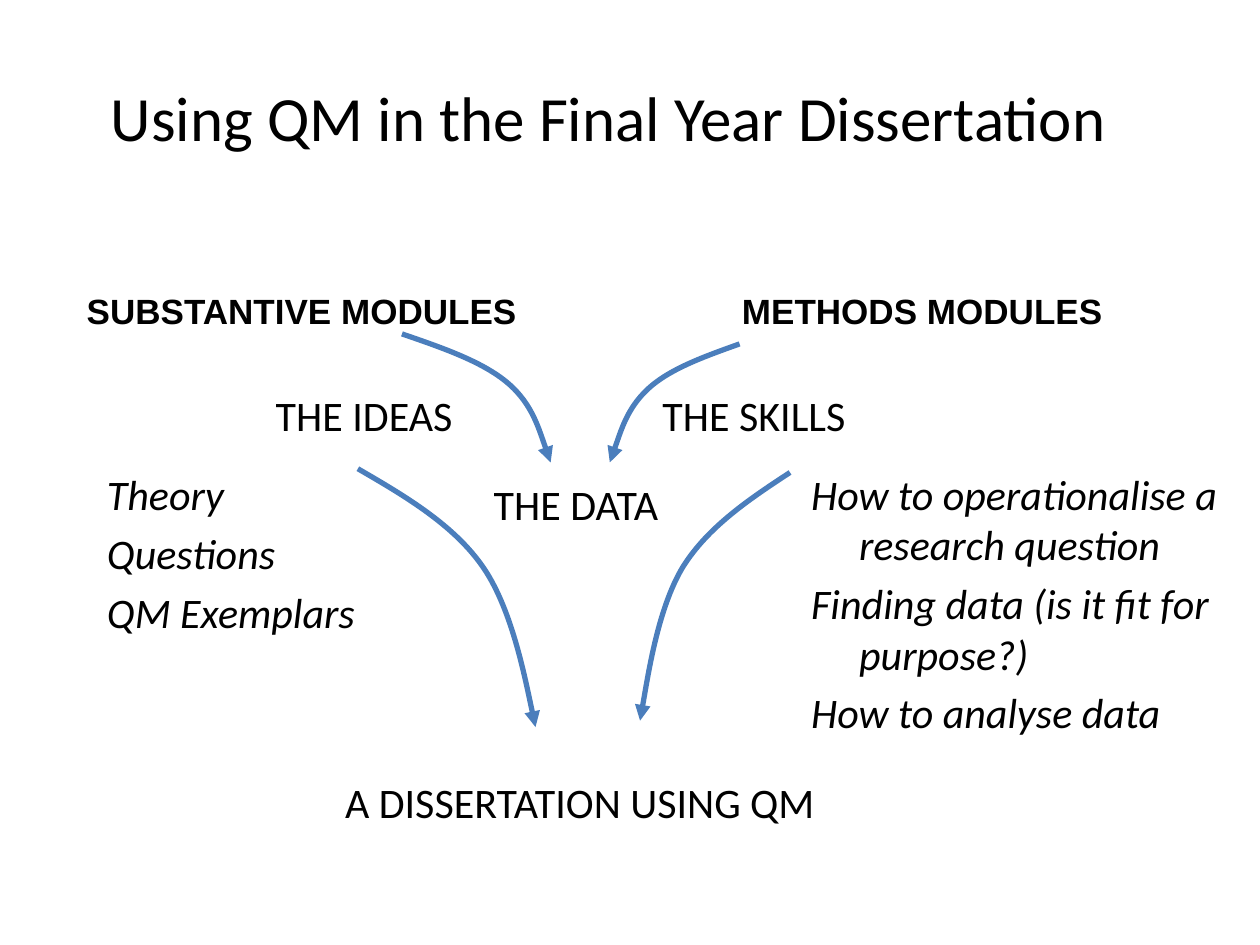
from lxml import etree
from pptx import Presentation
from pptx.dml.color import RGBColor
from pptx.enum.text import MSO_ANCHOR, PP_ALIGN
from pptx.oxml.ns import qn
from pptx.util import Inches, Pt

CENTER = PP_ALIGN.CENTER
MIDDLE = MSO_ANCHOR.MIDDLE
BLACK = "000000"
BLUE = "4B7EBC"
HANGING = Inches(0.38)

HEADINGS = [
    ("SUBSTANTIVE MODULES", (0.59, 2.25, 3.7, 0.44)),
    ("METHODS MODULES", (5.79, 2.25, 3.15, 0.77)),
]
LABELS = [
    ("THE IDEAS", (2.09, 3.04, 1.97, 0.63)),
    ("THE SKILLS", (5.16, 3.04, 1.97, 0.63)),
    ("THE DATA", (3.82, 3.75, 1.97, 0.63)),
]
IDEAS = ["Theory", "Questions", "QM Exemplars"]
SKILLS = [
    "How to operationalise a research question",
    "Finding data (is it fit for purpose?)",
    "How to analyse data",
]
CURVES = [
    [(2.84, 3.72), (3.22, 3.94), (3.61, 4.17), (3.84, 4.51),
     (4.07, 4.85), (4.25, 5.77), (4.25, 5.77)],
    [(6.27, 3.75), (5.95, 3.96), (5.62, 4.18), (5.42, 4.5),
     (5.22, 4.83), (5.08, 5.72), (5.08, 5.72)],
    [(3.19, 2.65), (3.51, 2.76), (3.83, 2.87), (4.03, 3.04),
     (4.23, 3.21), (4.37, 3.67), (4.37, 3.67)],
    [(5.87, 2.73), (5.59, 2.83), (5.31, 2.93), (5.14, 3.09),
     (4.97, 3.25), (4.84, 3.67), (4.84, 3.67)],
]


def color(value):
    return RGBColor.from_string(value)


def add_text(page, lines, place, size=24, font="Calibri", bold=False, italic=False):
    box = page.shapes.add_textbox(*map(Inches, place))
    frame = box.text_frame
    frame.word_wrap = True
    frame.text = "\n".join(lines)
    for para in frame.paragraphs:
        for span in para.runs:
            span.font.size = Pt(size)
            span.font.name = font
            span.font.bold = bold
            span.font.italic = italic
            span.font.color.rgb = color(BLACK)
    return frame


def add_hanging_text(page, lines, place, italic=False):
    frame = add_text(page, lines, place, italic=italic)
    for para in frame.paragraphs:
        para.space_before = Pt(4.8)
        properties = para._p.get_or_add_pPr()
        properties.set("marL", str(HANGING))
        properties.set("indent", str(-HANGING))
    return frame


def add_title(page, text):
    frame = add_text(page, [text], (0.5, 0.3, 9, 1.25), size=36)
    frame.vertical_anchor = MIDDLE
    frame.margin_right = Inches(0.44)
    frame.paragraphs[0].alignment = CENTER


def bend_path(shape):
    path = next(shape._element.iter(qn("a:path")))
    segments = path.findall(qn("a:lnTo"))
    for start in range(0, len(segments), 3):
        bezier = etree.SubElement(path, qn("a:cubicBezTo"))
        for segment in segments[start:start + 3]:
            bezier.append(segment[0])
            path.remove(segment)


def add_curved_arrow(page, points):
    start, *rest = [(Inches(x), Inches(y)) for x, y in points]
    builder = page.shapes.build_freeform(*start)
    builder.add_line_segments(rest, close=False)
    arrow = builder.convert_to_shape()
    bend_path(arrow)
    arrow.shadow.inherit = False
    arrow.fill.background()
    arrow.line.color.rgb = color(BLUE)
    arrow.line.width = Pt(3)
    line = arrow.line._get_or_add_ln()
    etree.SubElement(line, qn("a:tailEnd"), type="triangle")


def main():
    deck = Presentation()
    deck.slide_width = Inches(10)
    deck.slide_height = Inches(7.5)
    page = deck.slides.add_slide(deck.slide_layouts[6])

    add_title(page, "Using QM in the Final Year Dissertation")
    add_hanging_text(page, IDEAS, (0.75, 3.67, 2.52, 2.08), italic=True)
    add_hanging_text(page, SKILLS, (6.34, 3.67, 3.86, 2.2), italic=True)
    outcome = add_hanging_text(page, ["A DISSERTATION USING QM"], (2.64, 5.64, 4.58, 1.53))
    outcome.margin_top = Inches(0.52)
    for text, place in HEADINGS:
        add_text(page, [text], place, size=20, font="Arial", bold=True)
    for text, place in LABELS:
        add_hanging_text(page, [text], place)
    for points in CURVES:
        add_curved_arrow(page, points)

    deck.save("out.pptx")


if __name__ == "__main__":
    main()
